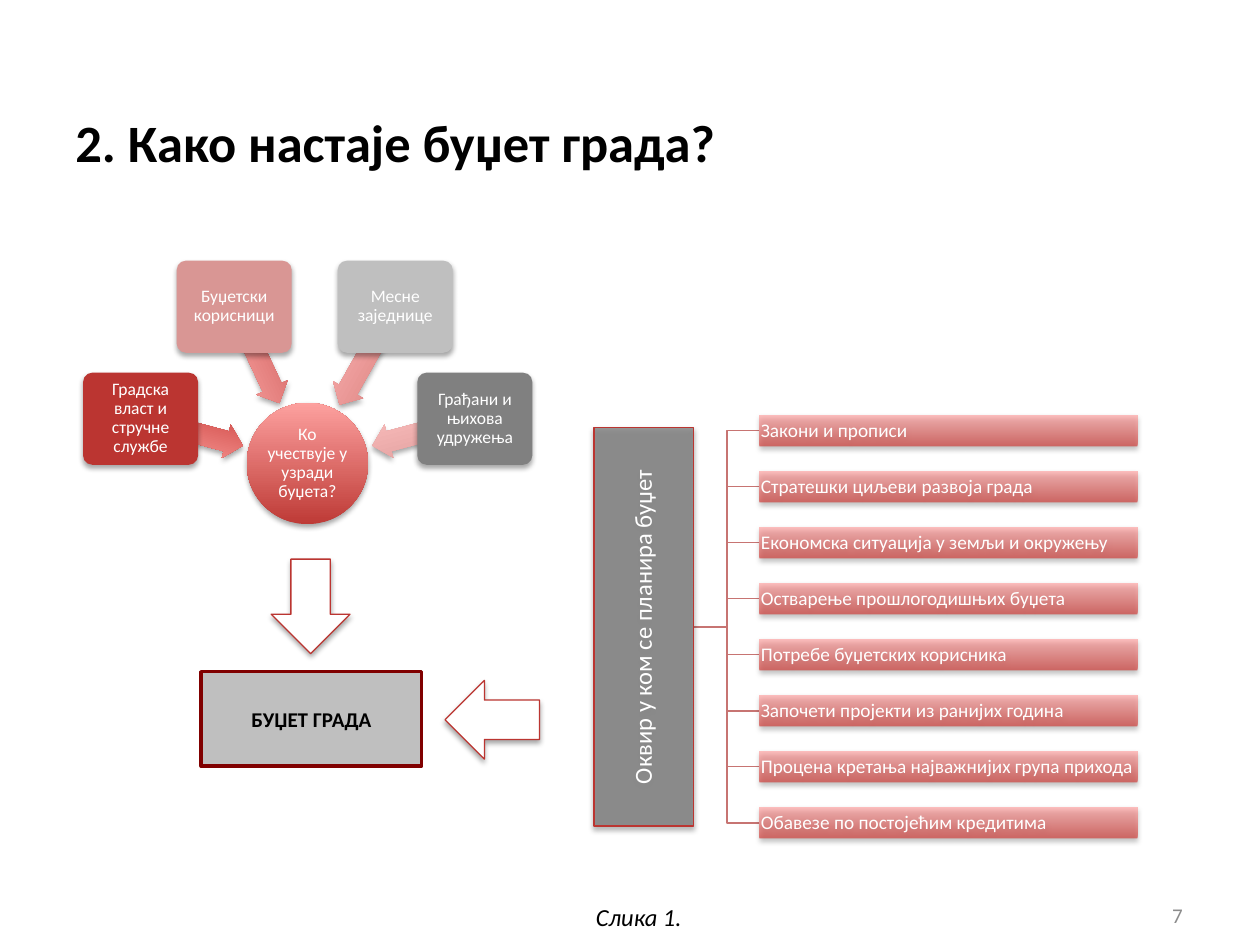
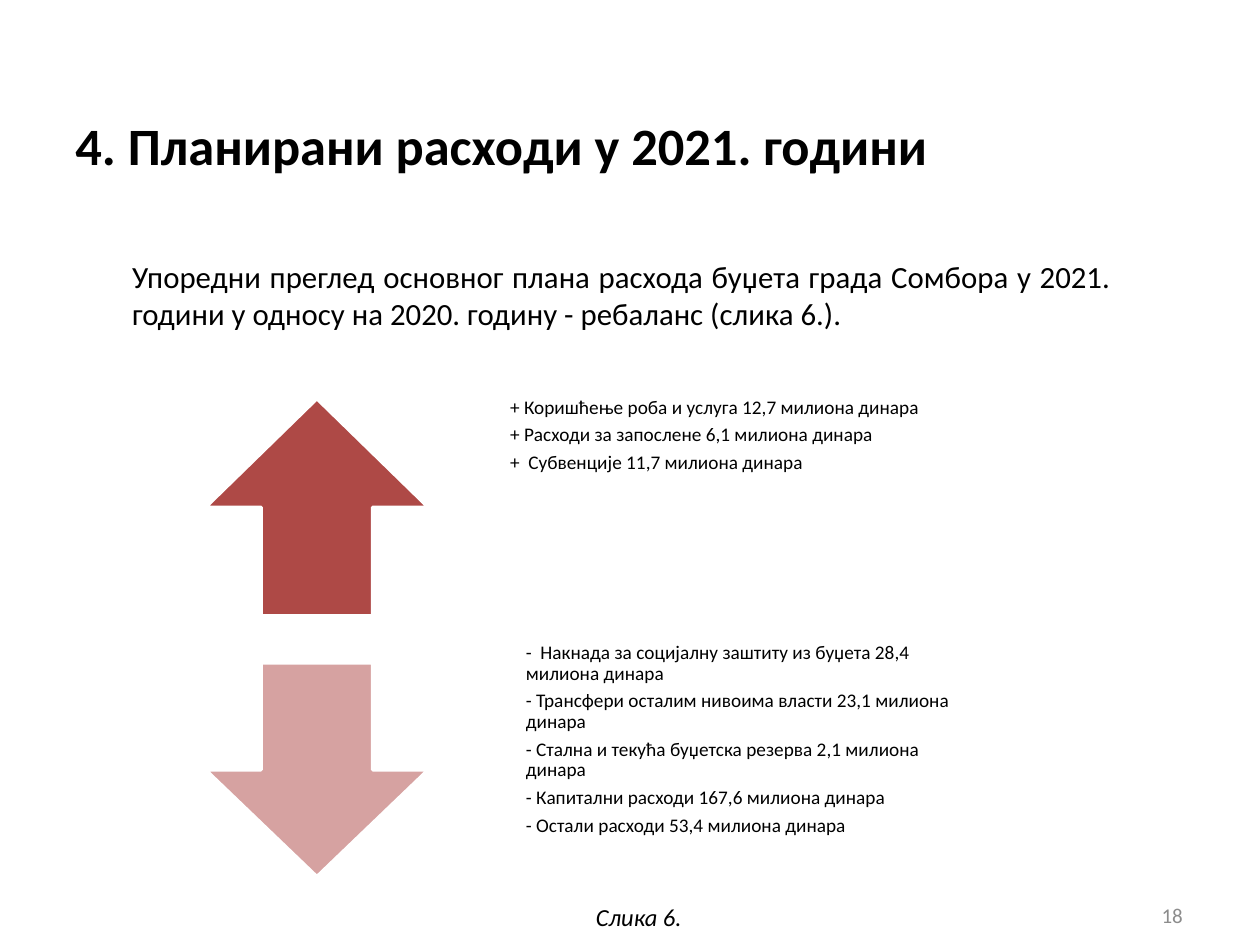
import lxml.etree
import pptx
import pptx.dml.color
import pptx.enum.shapes
import pptx.enum.text
import pptx.oxml.ns
import pptx.util

Pt = pptx.util.Pt
qn = pptx.oxml.ns.qn
SHAPE = pptx.enum.shapes.MSO_SHAPE
ALIGN = pptx.enum.text.PP_ALIGN
ANCHOR = pptx.enum.text.MSO_ANCHOR

FONT = "Calibri"
BLACK, WHITE = "000000", "FFFFFF"
RED, ROSE, SILVER, GREY = "BB3531", "D99694", "BFBFBF", "808080"
MAROON, LINK_RED, NUMBER_GREY = "800000", "C77472", "8C8C8C"

PARTICIPANTS = [
    ("Градска власт и стручне службе", 47.5, 213, RED),
    ("Буџетски корисници", 101, 149, ROSE),
    ("Месне заједнице", 193, 149, SILVER),
    ("Грађани и њихова удружења", 238.5, 213, GREY),
]
INWARD_ARROWS = [
    (79.3, 237, 60.5, 195, ("C83D39", "FFA3A1")),
    (116.6, 193, 60.5, 245, ("CE5C5A", "FFACAA")),
    (177.8, 193.5, 64, 299.4, ("D67B79", "FFB7B6")),
    (211.7, 237, 60.5, 345, ("DE9A99", "FFC4C3")),
]
PLANNING_FACTORS = [
    "Закони и прописи",
    "Стратешки циљеви развоја града",
    "Економска ситуација у земљи и окружењу",
    "Остварење прошлогодишњих буџета",
    "Потребе буџетских корисника",
    "Започети пројекти из ранијих година",
    "Процена кретања најважнијих група прихода",
    "Обавезе по постојећим кредитима",
]
INCREASES = [
    "+ Коришћење роба и услуга 12,7 милиона динара",
    "+ Расходи за запослене 6,1 милиона динара",
    "+  Субвенције 11,7 милиона динара",
]
DECREASES = [
    "-  Накнада за социјалну заштиту из буџета 28,4 милиона динара",
    "- Трансфери осталим нивоима власти 23,1 милиона динара",
    "- Стална и текућа буџетска резерва 2,1 милиона динара",
    "- Капитални расходи 167,6 милиона динара",
    "- Остали расходи 53,4 милиона динара",
]


def rgb(value):
    return pptx.dml.color.RGBColor.from_string(value)


def write(box, *lines, size=11, color=BLACK, bold=False, italic=False,
          align=ALIGN.LEFT, anchor=ANCHOR.MIDDLE, inset=(7.2, 3.6),
          spacing=None, after=0, wrap=True):
    frame = box.text_frame
    frame.word_wrap = wrap
    frame.vertical_anchor = anchor
    frame.margin_left = frame.margin_right = Pt(inset[0])
    frame.margin_top = frame.margin_bottom = Pt(inset[1])
    for index, line in enumerate(lines):
        para = frame.add_paragraph() if index else frame.paragraphs[0]
        para.alignment = align
        para.line_spacing = spacing
        para.space_after = Pt(after)
        span = para.add_run()
        span.text = line
        span.font.name = FONT
        span.font.size = Pt(size)
        span.font.bold = bold
        span.font.italic = italic
        span.font.color.rgb = rgb(color)


class Painter:
    """Draw styled elements on the current slide of a deck."""

    def __init__(self):
        self.deck = pptx.Presentation()
        self.deck.slide_width, self.deck.slide_height = Pt(720), Pt(540)
        self.page = None

    def new_page(self, title, title_top, caption, number):
        self.page = self.deck.slides.add_slide(self.deck.slide_layouts[6])
        self.text(36, title_top, 525, 70, title, size=30, bold=True)
        self.text(333.4, 512, 68, 24.5, caption, size=14, italic=True,
                  anchor=ANCHOR.TOP, wrap=False)
        self.text(515, 508.5, 168, 28.5, number, size=12, color=NUMBER_GREY,
                  align=ALIGN.RIGHT)

    def text(self, left, top, width, height, *lines, **style):
        box = self.page.shapes.add_textbox(Pt(left), Pt(top), Pt(width), Pt(height))
        write(box, *lines, **style)

    def shape(self, kind, left, top, width, height, fill, line=None, weight=0.75,
              opacity=None, rotation=0, adjust=(), shadow=True):
        box = self.page.shapes.add_shape(kind, Pt(left), Pt(top), Pt(width), Pt(height))
        box.rotation = rotation
        for index, value in enumerate(adjust):
            box.adjustments[index] = value
        if isinstance(fill, tuple):
            box.fill.gradient()
            box.fill.gradient_angle = 90
            for stop, color in zip(box.fill.gradient_stops, fill):
                stop.color.rgb = rgb(color)
        else:
            box.fill.solid()
            box.fill.fore_color.rgb = rgb(fill)
        if opacity:
            for color in box.element.spPr.iter(qn("a:srgbClr")):
                lxml.etree.SubElement(color, qn("a:alpha"), val=str(opacity * 1000))
        if line:
            box.line.color.rgb = rgb(line)
            box.line.width = Pt(weight)
        else:
            box.line.fill.background()
        box.shadow.inherit = False
        if shadow:
            self.cast_shadow(box)
        return box

    def cast_shadow(self, box):
        effects = box.element.spPr.find(qn("a:effectLst"))
        outer = lxml.etree.SubElement(
            effects, qn("a:outerShdw"), blurRad=str(Pt(3.1)), dist=str(Pt(1.8)),
            dir="5400000", rotWithShape="0")
        color = lxml.etree.SubElement(outer, qn("a:srgbClr"), val=BLACK)
        lxml.etree.SubElement(color, qn("a:alpha"), val="35000")

    def elbow(self, start, end):
        link = self.page.shapes.add_connector(
            pptx.enum.shapes.MSO_CONNECTOR.ELBOW, *map(Pt, start + end))
        link.line.color.rgb = rgb(LINK_RED)
        link.line.width = Pt(0.75)
        lxml.etree.SubElement(link.element.spPr, qn("a:effectLst"))


def draw_participants(painter):
    label = dict(size=10, color=WHITE, align=ALIGN.CENTER, spacing=0.9)
    hub = painter.shape(SHAPE.OVAL, 141, 230.2, 69.3, 69.3, ("BE3A36", "FDA19F"))
    write(hub, "Ко учествује у узради буџета?", inset=(0.9, 0.9), **label)
    for left, top, width, angle, colors in INWARD_ARROWS:
        painter.shape(SHAPE.LEFT_ARROW, left, top, width, 19.7, colors,
                      rotation=angle, adjust=(0.6, 0.5))
    for name, left, top, color in PARTICIPANTS:
        card = painter.shape(SHAPE.ROUNDED_RECTANGLE, left, top, 65.7, 52.6, color,
                             adjust=(0.1,))
        write(card, name, inset=(2.8, 2.8), **label)


def draw_budget(painter):
    for left, top, angle in ((155, 319.5, 0), (258.8, 384.3, 90)):
        painter.shape(SHAPE.DOWN_ARROW, left, top, 45, 54, WHITE, line=RED,
                      rotation=angle)
    budget = painter.shape(SHAPE.RECTANGLE, 115, 383.8, 126, 54, SILVER,
                           line=MAROON, weight=2, shadow=False)
    write(budget, "БУЏЕТ ГРАДА", size=12, bold=True, align=ALIGN.CENTER, inset=(0, 0))


def draw_framework(painter):
    first, step, height = 246.2, 32, 17.8
    middle = first + step * (len(PLANNING_FACTORS) - 1) / 2
    label = dict(color=WHITE, spacing=0.9, inset=(0.8, 0.8))
    centers = [first + step * index for index in range(len(PLANNING_FACTORS))]
    for center in centers:
        painter.elbow((396.8, middle), (434, center))
    frame = painter.shape(SHAPE.RECTANGLE, 254.2, middle - 28.5, 227.5, 57, "7F7F7F",
                          line=RED, opacity=80, rotation=270)
    write(frame, "Оквир у ком се планира буџет", size=14, align=ALIGN.CENTER, **label)
    for center, factor in zip(centers, PLANNING_FACTORS):
        bar = painter.shape(SHAPE.RECTANGLE, 434, center - height / 2, 216, height,
                            ("D1403C", "FFA6A5"), opacity=70)
        write(bar, factor, **label)


def draw_changes(painter):
    painter.text(68.4, 143.5, 573.8, 50,
                 "Упоредни преглед основног плана расхода буџета града Сомбора у 2021. "
                 "години у односу на 2020. годину - ребаланс (слика 6.).",
                 size=17.6, align=ALIGN.JUSTIFY, anchor=ANCHOR.TOP)
    arrow = dict(line=WHITE, weight=2, shadow=False)
    painter.shape(SHAPE.UP_ARROW, 117.4, 227.8, 127.4, 124.2, "AE4946", **arrow)
    painter.shape(SHAPE.DOWN_ARROW, 117.4, 378.8, 127.4, 122.2, "D6A2A1", **arrow)
    listing = dict(spacing=0.9, after=3.85, anchor=ANCHOR.TOP, inset=(6.5, 0))
    painter.text(285, 227.2, 343.5, 48, *INCREASES, **listing)
    painter.text(294, 367.4, 265, 114, *DECREASES, **listing)


def main():
    painter = Painter()
    painter.new_page("2. Како настаје буџет града?", 45.6, "Слика 1.", "7")
    draw_participants(painter)
    draw_budget(painter)
    draw_framework(painter)
    painter.new_page("4. Планирани расходи у 2021. години", 47.8, "Слика 6.", "18")
    draw_changes(painter)
    painter.deck.save("out.pptx")


if __name__ == "__main__":
    main()
